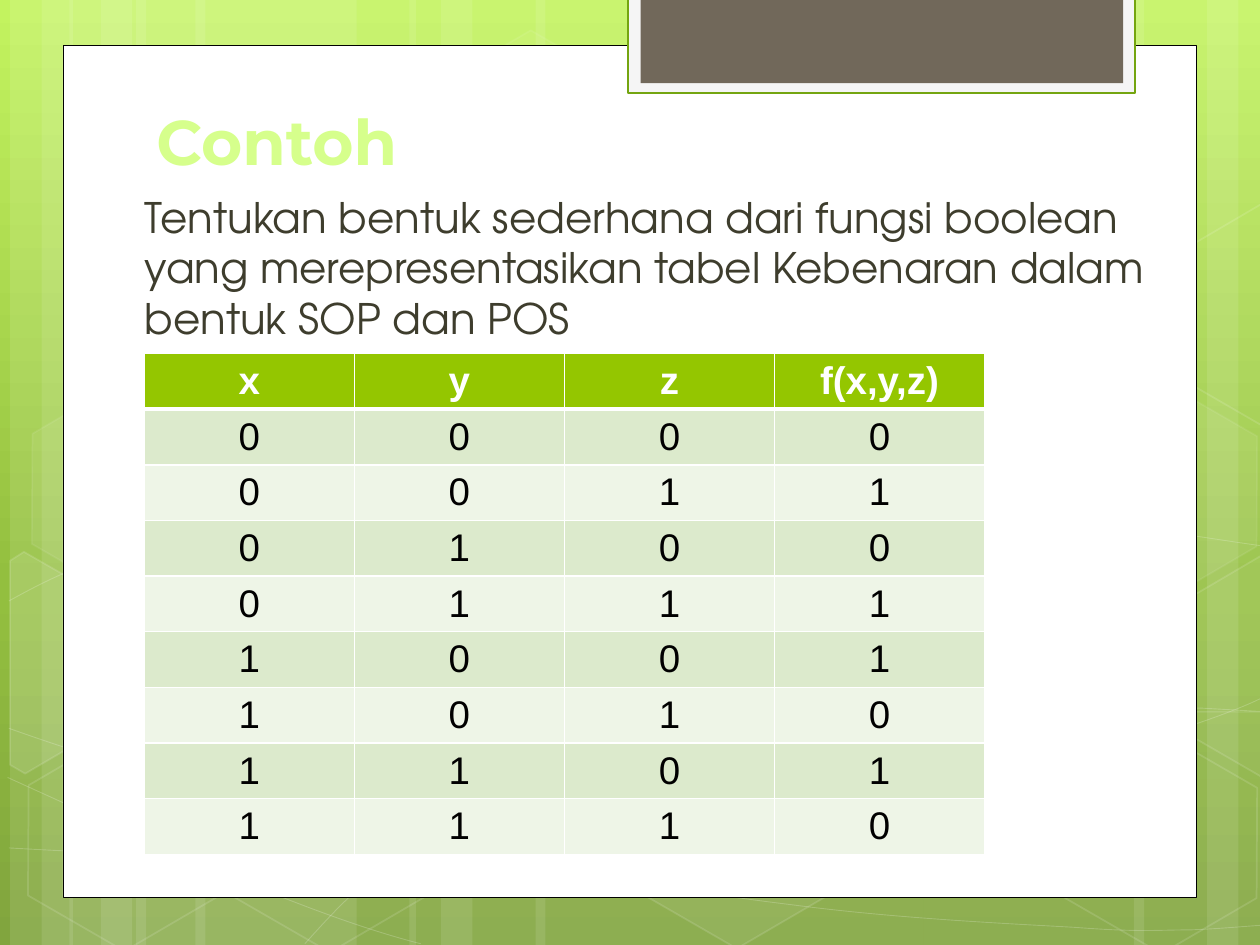
from dataclasses import dataclass
from math import cos, radians, sin

from lxml import etree
from pptx import Presentation
from pptx.dml.color import RGBColor
from pptx.enum.shapes import MSO_SHAPE
from pptx.enum.text import MSO_ANCHOR, PP_ALIGN
from pptx.oxml.ns import qn
from pptx.util import Emu, Inches, Pt

RECT, HEX = MSO_SHAPE.RECTANGLE, MSO_SHAPE.HEXAGON
LOW, MID = MSO_ANCHOR.BOTTOM, MSO_ANCHOR.MIDDLE
LEFT, CENTER = PP_ALIGN.LEFT, PP_ALIGN.CENTER

# The slide is a grid of 100 columns and 75 rows.
WIDE, HIGH = Inches(10), Inches(7.5)
COL, ROW = WIDE / 100, HIGH / 75
TILT = 30


@dataclass(frozen=True)
class Theme:
    sky: tuple = ((0, "C3F35F"), (62, "93BF3F"), (100, "81A53E"))
    white: str = "FFFFFF"
    black: str = "000000"
    frame: str = "F5F5F5"
    edge: str = "74A510"
    tab: str = "71685A"
    title: str = "D6FF8C"
    body: str = "3E3D2D"
    head: str = "94C600"
    bands: tuple = ("DCEACC", "EEF5E7")
    title_font: str = "Montserrat"
    body_font: str = "TeX Gyre Adventor"
    cell_font: str = "Arial"
    title_size: int = 36
    body_size: int = 24
    cell_size: int = 22


THEME = Theme()

# Each curve is a start point followed by three points per Bezier piece.
CURVES = [
    [(.7, 67.3), (6.1, 67.6), (11.5, 67.9), (19, 67.8), (26.5, 67.7), (35.8, 67.5),
     (45.8, 66.5), (55.8, 65.5), (70, 63.6), (79.2, 61.7), (88.3, 59.8), (97.7, 56.8),
     (100.7, 55.1)],
    [(.7, 47.7), (3.6, 46.1), (6.5, 44.6), (12.1, 43.1), (17.8, 41.6), (25.9, 39.4),
     (34.7, 38.7), (43.6, 38), (54.4, 37.9), (65.4, 38.7), (76.4, 39.5), (94.7, 42.6),
     (100.7, 43.4)],
    [(.6, 61.7), (12.7, 67.2), (24.7, 72.7), (33.4, 74.9)],
    [(.7, 57.8), (3.8, 58.9), (7, 60), (12.8, 61.6), (18.6, 63.1), (27.3, 65.6),
     (35.7, 67.3), (44, 69), (54.5, 70.8), (62.8, 71.8), (71.1, 72.9), (80, 73.3),
     (85.3, 73.6), (90.5, 74), (91.9, 73.8), (94.5, 73.8), (97.1, 73.7), (98.9, 73.5),
     (100.7, 73.4)],
    [(24.2, 74.9), (26, 72.9), (27.8, 70.9), (30.2, 69.1), (32.6, 67.3), (36, 65.3),
     (38.8, 63.9), (41.6, 62.5), (43.3, 61.9), (47, 60.9), (50.6, 59.9), (57.3, 58.5),
     (60.8, 57.8), (64.4, 57.1), (64.9, 57.1), (68, 56.9), (71.1, 56.6), (76, 56.3),
     (79.4, 56.2), (82.9, 56.1), (88.6, 56.2), (88.6, 56.2), (90.8, 56.2), (93, 56.2),
     (95.3, 56.2), (97.1, 56.3), (98.8, 56.4), (100.6, 56.5), (100.3, 56.5),
     (100.6, 56.6)],
]
# Left, top, fill opacity and line opacity.
CELLS = [(33.4, 3.6, 4, 8), (49.7, 58.9, 6, 12), (1.1, 59.1, 0, 12), (1.4, 31.2, 7, 8),
         (17.4, 59.2, 0, 12), (75.3, 45.3, 10, 12), (83.4, 59.3, 0, 12), (83.4, 31.4, 7, 8)]
# Hexagons cut by the side of the slide: fill opacity and outline.
RIGHT = [(92.6, 48.5), (100.1, 44.1), (100.9, 44.6), (100.9, 61.3), (100.2, 61.7), (92.6, 57.3)]
CUTS = [(10, [(.8, 44.5), (1.9, 43.8), (9.6, 48.2), (9.5, 57), (2, 61.4), (.8, 60.7)]),
        (4, RIGHT), (0, [(x, y - 27.9) for x, y in RIGHT])]

HEADS = ["x", "y", "z", "f(x,y,z)"]
TRUTH = "01011010"


def place(box):
    x, y, w, h = box
    return Emu(round(x * COL)), Emu(round(y * ROW)), Emu(round(w * COL)), Emu(round(h * ROW))


def tint(fill, host, color, clear):
    """Fill with a colour at an opacity in per cent; host gives the XML that holds the fill."""
    if not clear:
        fill.background()
        return
    fill.solid()
    fill.fore_color.rgb = RGBColor.from_string(color)
    if clear < 100:
        mark = host().find(qn("a:solidFill") + "/" + qn("a:srgbClr"))
        etree.SubElement(mark, qn("a:alpha")).set("val", str(clear * 1000))


def paint(shape, fill, clear=100, line=None, width=0, thin=100):
    prop = shape.element.spPr
    shape.shadow.inherit = False
    tint(shape.fill, lambda: prop, fill, clear)
    if line:
        tint(shape.line.fill, lambda: prop.find(qn("a:ln")), line, thin)
        shape.line.width = Pt(width)
    else:
        shape.line.fill.background()


def block(slide, box, fill, **look):
    paint(slide.shapes.add_shape(RECT, *place(box)), fill, **look)


def trace(slide, dots, close):
    dots = [(x * COL, y * ROW) for x, y in dots]
    pen = slide.shapes.build_freeform(*dots[0], scale=1.0)
    pen.add_line_segments(dots[1:], close=close)
    return pen.convert_to_shape()


def curve(slide, dots):
    """Draw the points as straight pieces, then join each three as one Bezier piece."""
    shape = trace(slide, dots, False)
    legs = list(shape.element.iter(qn("a:lnTo")))
    for i in range(0, len(legs), 3):
        piece = etree.Element(qn("a:cubicBezTo"))
        legs[i].addprevious(piece)
        for leg in legs[i:i + 3]:
            piece.append(leg[0])
            leg.getparent().remove(leg)
    paint(shape, THEME.white, 0, THEME.white, .5, 20)


def turn(x, y, angle):
    a = radians(angle)
    return x * cos(a) - y * sin(a), x * sin(a) + y * cos(a)


def cut(slide, clear, dots):
    """Draw the outline upright, then tilt it into its place."""
    shape = trace(slide, [turn(x, y, -TILT) for x, y in dots], True)
    w, h = shape.width, shape.height
    x, y = turn(shape.left + w / 2, shape.top + h / 2, TILT)
    shape.left, shape.top = Emu(round(x - w / 2)), Emu(round(y - h / 2))
    shape.rotation = TILT
    paint(shape, THEME.white, clear, THEME.white, 1, 12)


def write(frame, text, font, size, color, bold=False, align=LEFT):
    frame.text = text
    para = frame.paragraphs[0]
    para.alignment = align
    face = para.runs[0].font
    face.name, face.size, face.bold = font, Pt(size), bold
    face.color.rgb = RGBColor.from_string(color)
    return para


def sky(slide):
    fill = slide.background.fill
    fill.gradient()
    fill.gradient_angle = 270
    stops = slide.element.find(".//" + qn("a:gsLst"))
    for old in list(stops):
        stops.remove(old)
    for at, color in THEME.sky:
        stop = etree.SubElement(stops, qn("a:gs"), pos=str(at * 1000))
        etree.SubElement(stop, qn("a:srgbClr"), val=color)


def streaks(slide, edge, wide=17.5, flip=False):
    """Three sheer bands that step inward from an edge."""
    for gap, w in ((10, wide), (0, 5), (2.5, 8.3)):
        x = edge - gap - w if flip else edge + gap
        block(slide, (x, 0, w, 75), THEME.white, clear=10)


def decor(slide):
    streaks(slide, .8)
    streaks(slide, 5.5)
    streaks(slide, 100.8, flip=True)
    streaks(slide, 32.5, wide=30.8)
    for dots in CURVES:
        curve(slide, dots)
    for x, y, clear, thin in CELLS:
        cell = slide.shapes.add_shape(HEX, *place((x, y, 17.5, 15.2)))
        cell.adjustments[0] = .285
        cell.rotation = TILT
        paint(cell, THEME.white, clear, THEME.white, 1, thin)
    for clear, dots in CUTS:
        cut(slide, clear, dots)


def card(slide):
    block(slide, (5, 3.6, 90, 67.65), THEME.white, line=THEME.black, width=.5)
    block(slide, (49.85, -.2, 40.2, 7.6), THEME.frame, line=THEME.edge, width=1.25)
    block(slide, (50.85, -.2, 38.3, 6.8), THEME.tab)


def title(slide, box, text):
    head = slide.shapes.title
    head.element.getparent().append(head.element)
    head.left, head.top, head.width, head.height = place(box)
    head.text_frame.vertical_anchor = LOW
    write(head.text_frame, text, THEME.title_font, THEME.title_size, THEME.title, True)


def body(slide, box, text):
    frame = slide.shapes.add_textbox(*place(box)).text_frame
    frame.word_wrap = True
    para = write(frame, text, THEME.body_font, THEME.body_size, THEME.body)
    para.space_before = Pt(4.8)
    para._p.get_or_add_pPr().set("marL", str(Inches(.38)))


def rule(cell, sides):
    for side, width in sides.items():
        line = etree.SubElement(cell._tc.get_or_add_tcPr(), qn("a:ln" + side), w=str(Pt(width)))
        fill = etree.SubElement(line, qn("a:solidFill"))
        etree.SubElement(fill, qn("a:srgbClr"), val=THEME.white)


def table(slide, box, rows):
    grid = slide.shapes.add_table(len(rows), len(rows[0]), *place(box)).table
    for r, row in enumerate(rows):
        top = r == 0
        for c, text in enumerate(row):
            cell = grid.cell(r, c)
            rule(cell, {"L": 1, "R": 1, "T": 3 if r == 1 else 1, "B": 3 if top else 1})
            cell.fill.solid()
            cell.fill.fore_color.rgb = RGBColor.from_string(
                THEME.head if top else THEME.bands[(r - 1) % 2])
            cell.margin_top = cell.margin_bottom = Inches(.03)
            cell.vertical_anchor = MID
            write(cell.text_frame, text, THEME.cell_font, THEME.cell_size,
                  THEME.white if top else THEME.black, top, CENTER)


def main():
    deck = Presentation()
    deck.slide_width, deck.slide_height = WIDE, HIGH
    slide = deck.slides.add_slide(deck.slide_layouts[5])
    sky(slide)
    decor(slide)
    card(slide)
    title(slide, (11.4, 11.2, 76.8, 3.4), "Contoh")
    body(slide, (6.7, 14.7, 87.4, 38.4), "Tentukan bentuk sederhana dari fungsi boolean "
         "yang merepresentasikan tabel Kebenaran dalam bentuk SOP dan POS")
    rows = [HEADS] + [list(f"{n:03b}") + [out] for n, out in enumerate(TRUTH)]
    table(slide, (11.45, 28.05, 66.7, 39.78), rows)
    deck.save("out.pptx")


if __name__ == "__main__":
    main()
